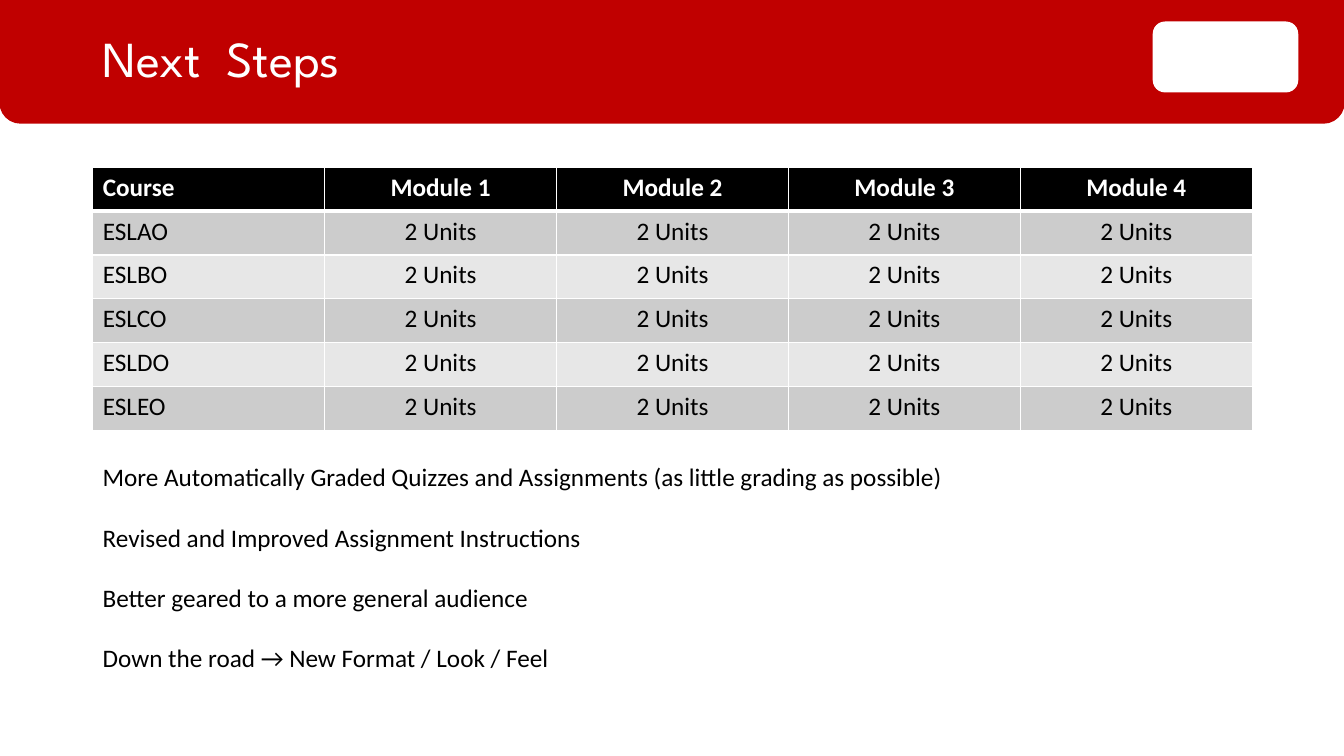
from dataclasses import dataclass

from lxml import etree
from pptx import Presentation
from pptx.dml.color import RGBColor
from pptx.enum.shapes import MSO_SHAPE
from pptx.enum.text import MSO_ANCHOR, MSO_AUTO_SIZE, PP_ALIGN
from pptx.oxml.ns import qn
from pptx.util import Inches, Pt

LEFT, CENTER = PP_ALIGN.LEFT, PP_ALIGN.CENTER
MIDDLE, TOP = MSO_ANCHOR.MIDDLE, MSO_ANCHOR.TOP
NO_FIT = MSO_AUTO_SIZE.NONE
BANNER, BADGE = MSO_SHAPE.ROUND_2_SAME_RECTANGLE, MSO_SHAPE.ROUNDED_RECTANGLE


@dataclass(frozen=True)
class Theme:
    red: str = "C00000"
    white: str = "FFFFFF"
    black: str = "000000"
    dark: str = "CCCCCC"
    light: str = "E7E7E7"
    head: str = "League Spartan"
    body: str = "Calibri"
    big: int = 36
    size: int = 18


THEME = Theme()
WIDTH, HEIGHT = 13.33, 7.5
EDGE, SPAN = 0.92, 11.5

HEADS = ["Course"] + [f"Module {n}" for n in range(1, 5)]
ROWS = [[f"ESL{level}O"] + ["2 Units"] * 4 for level in "ABCDE"]
PLANS = [
    "More Automatically Graded Quizzes and Assignments (as little grading as possible)",
    "Revised and Improved Assignment Instructions",
    "Better geared to a more general audience",
    "Down the road → New Format / Look / Feel",
]


def write(frame, lines, font=THEME.body, size=THEME.size, color=THEME.black,
          bold=False, align=LEFT, anchor=TOP, gap=0, pitch=1.0):
    """Fill a text frame, one paragraph for each line."""
    frame.word_wrap = True
    frame.vertical_anchor = anchor
    for i, line in enumerate(lines):
        para = frame.add_paragraph() if i else frame.paragraphs[0]
        para.alignment = align
        para.line_spacing = pitch
        para.space_before = Pt(gap if i else 0)
        run = para.add_run()
        run.text = line
        run.font.name, run.font.size = font, Pt(size)
        run.font.bold = bold
        run.font.color.rgb = RGBColor.from_string(color)


def add_plate(slide, kind, box, color):
    """Add a plain shape behind the title."""
    plate = slide.shapes.add_shape(kind, *map(Inches, box))
    plate.shadow.inherit = False
    plate.fill.solid()
    plate.fill.fore_color.rgb = RGBColor.from_string(color)
    plate.line.color.rgb = RGBColor.from_string(color)
    plate.line.width = Pt(1)
    slide.shapes.title.element.addprevious(plate.element)
    return plate


def add_title(slide, text):
    title = slide.shapes.title
    title.left, title.top = Inches(EDGE), Inches(0)
    title.width, title.height = Inches(9.72), Inches(1.22)
    write(title.text_frame, [text], font=THEME.head, size=THEME.big,
          color=THEME.white, anchor=MIDDLE, pitch=0.9)
    title.text_frame.auto_size = NO_FIT


def add_edges(cell, **widths):
    """Draw the white cell borders, widths in points by side."""
    props = cell._tc.get_or_add_tcPr()
    for side in "LRTB":
        line = etree.SubElement(props, qn(f"a:ln{side}"), w=str(Pt(widths.get(side, 1))))
        fill = etree.SubElement(line, qn("a:solidFill"))
        etree.SubElement(fill, qn("a:srgbClr"), val=THEME.white)


def add_grid(slide, rows):
    """Add the course table with a black head and banded rows."""
    table = slide.shapes.add_table(
        len(rows), len(rows[0]), Inches(EDGE), Inches(1.66),
        Inches(SPAN), Inches(2.61)).table
    for r, row in enumerate(rows):
        head = r == 0
        band = THEME.black if head else THEME.dark if r % 2 else THEME.light
        for c, text in enumerate(row):
            cell = table.cell(r, c)
            add_edges(cell, B=3 if head else 1, T=3 if r == 1 else 1)
            cell.fill.solid()
            cell.fill.fore_color.rgb = RGBColor.from_string(band)
            write(cell.text_frame, [text], bold=head, align=CENTER if c else LEFT,
                  color=THEME.white if head else THEME.black)


def add_plans(slide, lines):
    box = slide.shapes.add_textbox(
        Inches(EDGE), Inches(4.53), Inches(SPAN), Inches(2.22))
    write(box.text_frame, lines, gap=21.5)


def main():
    deck = Presentation()
    deck.slide_width, deck.slide_height = Inches(WIDTH), Inches(HEIGHT)
    slide = deck.slides.add_slide(deck.slide_layouts[5])

    # Red banner, rounded at its foot, with a white badge
    banner = add_plate(slide, BANNER, (0, 0, WIDTH, 1.22), THEME.red)
    banner.rotation = 180
    add_plate(slide, BADGE, (11.44, 0.22, 1.43, 0.69), THEME.white)
    add_title(slide, "Next  Steps")

    # Course units and plans
    add_grid(slide, [HEADS] + ROWS)
    add_plans(slide, PLANS)
    deck.save("out.pptx")


if __name__ == "__main__":
    main()
